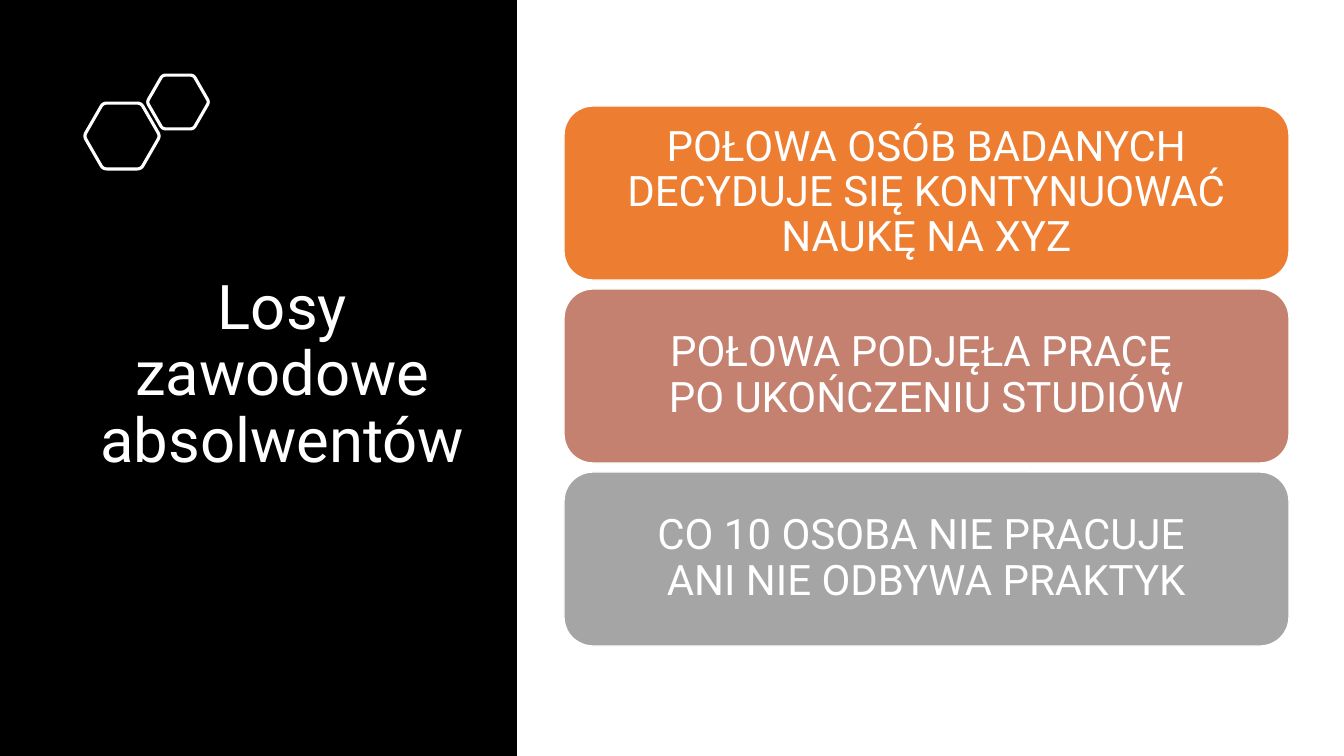
import math
from pptx import Presentation
from pptx import util as u
from pptx.dml.color import RGBColor
from pptx.enum import shapes, text

COLORS = {
    "black": "000000",
    "white": "FFFFFF",
    "orange": "ED7D31",
    "rose": "C48170",
    "grey": "A5A5A5",
}
FONT = "Roboto"
HEADING = "Losy zawodowe absolwentów"
CARDS = [
    ("POŁOWA OSÓB BADANYCH DECYDUJE SIĘ KONTYNUOWAĆ NAUKĘ NA XYZ", "orange"),
    ("POŁOWA PODJĘŁA PRACĘ \vPO UKOŃCZENIU STUDIÓW", "rose"),
    ("CO 10 OSOBA NIE PRACUJE \vANI NIE ODBYWA PRAKTYK", "grey"),
]
HEXAGONS = [(122, 136, 38), (178, 102, 31)]
SLIDE_SIZE = (1344, 756)
PANEL = (0, 0, 517, 756)
HEADING_BOX = (85, 271, 395, 353)
CARD_BOX = (564, 106, 725, 174)
CARD_PITCH = 183
CARD_MARGIN = 12
CORNER_CUT = 0.1
CORNER_STEPS = 6


def px(length):
    return round(length * 914400 / 100.8)


def box(lengths):
    return [px(length) for length in lengths]


def color(name):
    return RGBColor.from_string(COLORS[name])


def add_block(kind, place, fill):
    block = slide.shapes.add_shape(kind, *box(place))
    block.shadow.inherit = False
    block.fill.solid()
    block.fill.fore_color.rgb = color(fill)
    return block


def format_paragraph(paragraph, size):
    paragraph.alignment = text.PP_ALIGN.CENTER
    paragraph.line_spacing = 0.9
    paragraph.font.name = FONT
    paragraph.font.size = u.Pt(size)
    paragraph.font.color.rgb = color("white")


def rounded_hexagon(x, y, radius):
    corners = [(x + radius * math.cos(k * math.pi / 3),
                y + radius * math.sin(k * math.pi / 3)) for k in range(6)]
    points = []
    for k, corner in enumerate(corners):
        before, after = corners[k - 1], corners[(k + 1) % 6]
        for step in range(CORNER_STEPS + 1):
            t = step / CORNER_STEPS
            to_before = CORNER_CUT * (1 - t) ** 2
            to_after = CORNER_CUT * t ** 2
            points.append(tuple(px(c + to_before * (b - c) + to_after * (a - c))
                                for b, c, a in zip(before, corner, after)))
    return points


prs = Presentation()
prs.slide_width, prs.slide_height = box(SLIDE_SIZE)
slide = prs.slides.add_slide(prs.slide_layouts[5])

panel = add_block(shapes.MSO_SHAPE.RECTANGLE, PANEL, "black")
panel.line.fill.background()

heading = slide.shapes.title
heading.left, heading.top, heading.width, heading.height = box(HEADING_BOX)
heading.text_frame.text = HEADING
heading.text_frame.word_wrap = True
heading.text_frame.auto_size = text.MSO_AUTO_SIZE.NONE
heading.text_frame.vertical_anchor = text.MSO_ANCHOR.TOP
format_paragraph(heading.text_frame.paragraphs[0], 44)
slide.shapes._spTree.remove(panel._element)
slide.shapes._spTree.insert(2, panel._element)

for hexagon in HEXAGONS:
    first, *others = rounded_hexagon(*hexagon)
    builder = slide.shapes.build_freeform(*first)
    builder.add_line_segments(others, close=True)
    outline = builder.convert_to_shape()
    outline.shadow.inherit = False
    outline.fill.background()
    outline.line.color.rgb = color("white")
    outline.line.width = u.Pt(2.25)

left, top, width, height = CARD_BOX
for row, (message, fill) in enumerate(CARDS):
    card = add_block(shapes.MSO_SHAPE.ROUNDED_RECTANGLE,
                     (left, top + row * CARD_PITCH, width, height), fill)
    card.line.color.rgb = color("white")
    card.line.width = u.Pt(1)
    frame = card.text_frame
    frame.text = message
    frame.word_wrap = True
    frame.vertical_anchor = text.MSO_ANCHOR.MIDDLE
    frame.margin_left = frame.margin_right = px(CARD_MARGIN)
    frame.margin_top = frame.margin_bottom = px(CARD_MARGIN)
    format_paragraph(frame.paragraphs[0], 30)

prs.save("out.pptx")
